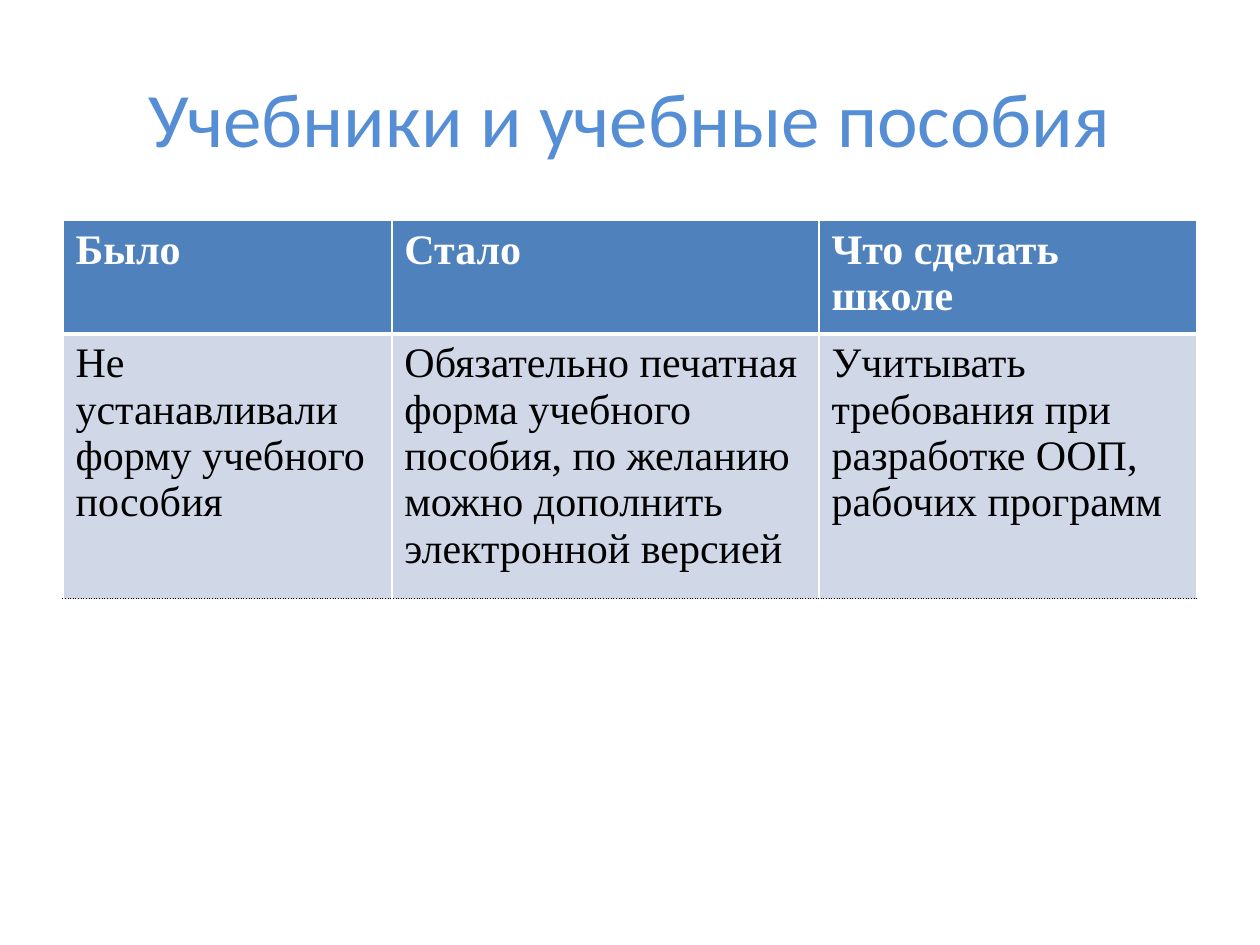
from dataclasses import dataclass

from lxml import etree
from pptx import Presentation
from pptx import util as u
from pptx.dml.color import RGBColor
from pptx.enum import text
from pptx.oxml.ns import qn


@dataclass(frozen=True)
class Theme:
    title_font: str = "Calibri"
    table_font: str = "Times New Roman"
    title_size: int = 44
    table_size: int = 24
    title: str = "558ED5"
    header_fill: str = "4F81BD"
    body_fill: str = "D0D8E8"
    light: str = "FFFFFF"
    dark: str = "000000"


class SlideBuilder:
    def __init__(self, slide, theme):
        self.slide = slide
        self.theme = theme

    def style(self, p, name, size, color, bold=False):
        p.font.name = name
        p.font.size = u.Pt(size)
        p.font.bold = bold
        p.font.color.rgb = RGBColor.from_string(color)

    def title(self, words, left, top, width, height):
        box = self.slide.shapes.add_textbox(*map(u.Inches, (left, top, width, height)))
        tf = box.text_frame
        tf.word_wrap = True
        tf.vertical_anchor = text.MSO_ANCHOR.MIDDLE
        p = tf.paragraphs[0]
        p.text = words
        p.alignment = text.PP_ALIGN.CENTER
        self.style(p, self.theme.title_font, self.theme.title_size, self.theme.title)

    def border(self, cell, side, color, points, dash="solid"):
        """Add one cell edge; edges go in the order L, R, T, B, before the fill."""
        tc_pr = cell._tc.get_or_add_tcPr()
        ln = etree.SubElement(tc_pr, qn(f"a:ln{side}"), w=str(u.Pt(points)))
        fill = etree.SubElement(ln, qn("a:solidFill"))
        etree.SubElement(fill, qn("a:srgbClr"), val=color)
        etree.SubElement(ln, qn("a:prstDash"), val=dash)

    def cell(self, cell, words, header):
        th = self.theme
        self.border(cell, "L", th.light, 1)
        self.border(cell, "R", th.light, 1)
        self.border(cell, "T", th.light, 1 if header else 3)
        if header:
            self.border(cell, "B", th.light, 3)
        else:
            self.border(cell, "B", th.dark, 1, "sysDot")
        cell.fill.solid()
        cell.fill.fore_color.rgb = RGBColor.from_string(
            th.header_fill if header else th.body_fill)
        p = cell.text_frame.paragraphs[0]
        p.text = words
        self.style(p, th.table_font, th.table_size,
                   th.light if header else th.dark, bold=header)

    def table(self, rows, left, top, widths, heights):
        frame = self.slide.shapes.add_table(
            len(rows), len(widths), u.Inches(left), u.Inches(top),
            u.Inches(sum(widths)), u.Inches(sum(heights)))
        table = frame.table
        for column, width in zip(table.columns, widths):
            column.width = u.Inches(width)
        for i, (row, height) in enumerate(zip(rows, heights)):
            table.rows[i].height = u.Inches(height)
            for j, words in enumerate(row):
                self.cell(table.cell(i, j), words, header=i == 0)


def main():
    prs = Presentation()
    prs.slide_width, prs.slide_height = u.Inches(10), u.Inches(7.5)
    builder = SlideBuilder(prs.slides.add_slide(prs.slide_layouts[6]), Theme())
    builder.title("Учебники и учебные пособия", 0.5, 0.3, 9, 1.25)
    builder.table(
        [
            ("Было", "Стало", "Что сделать школе"),
            (
                "Не устанавливали форму учебного пособия",
                "Обязательно печатная форма учебного пособия, "
                "по желанию можно дополнить электронной версией",
                "Учитывать требования при разработке ООП, рабочих программ",
            ),
        ],
        0.5, 1.75, widths=(2.61, 3.39, 3), heights=(0.83, 1.95),
    )
    prs.save("out.pptx")


if __name__ == "__main__":
    main()
